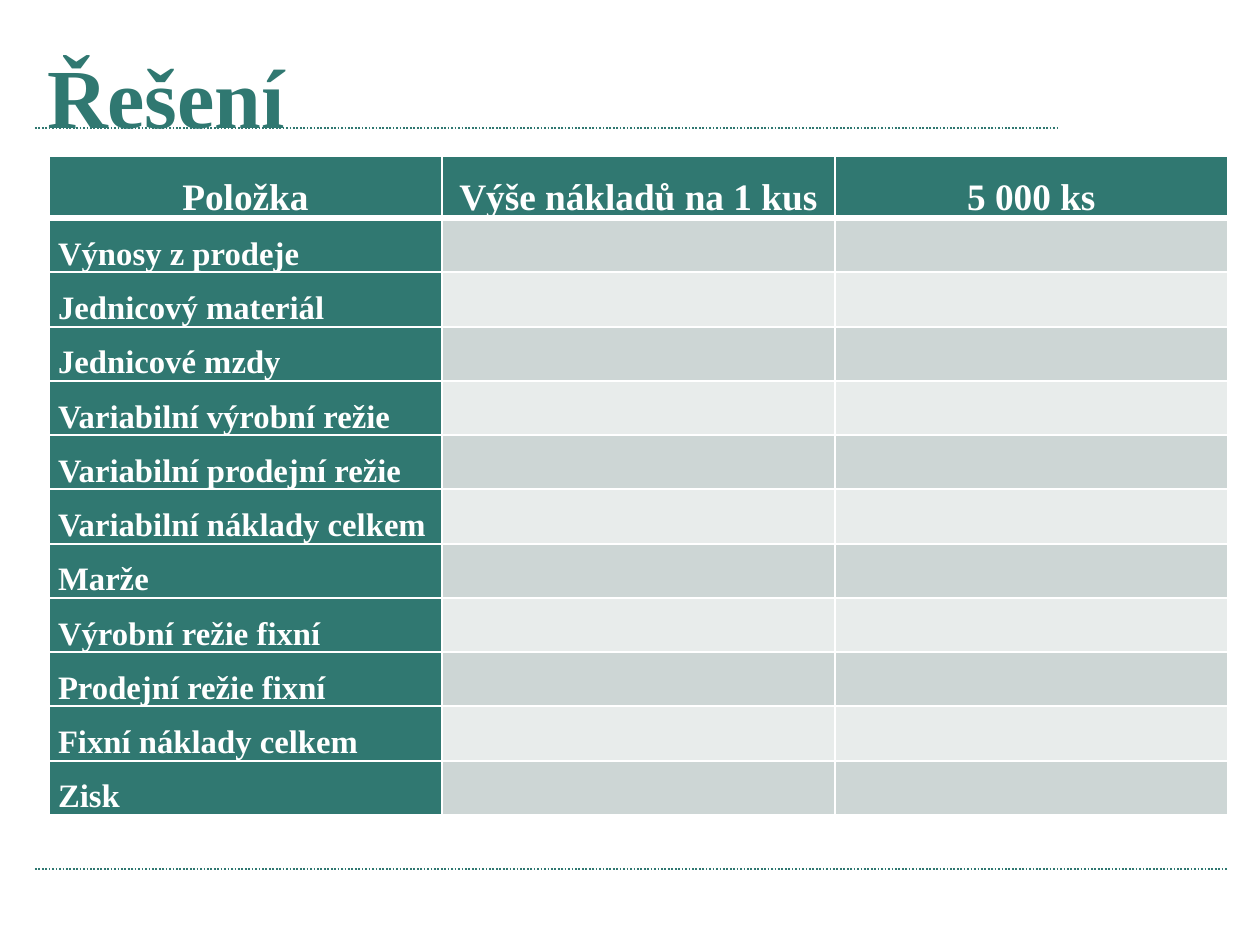
"""Build the slide with the empty cost and profit solution table."""
from lxml import etree
from pptx import Presentation
from pptx.dml.color import RGBColor
from pptx.enum.dml import MSO_LINE
from pptx.enum.shapes import MSO_CONNECTOR
from pptx.enum.text import MSO_ANCHOR, MSO_AUTO_SIZE, PP_ALIGN
from pptx.oxml.ns import qn
from pptx.util import Emu, Pt

PX = 914400 // 168
FONT = "Times New Roman"
COLORS = {"teal": "307871", "white": "FFFFFF", "dark": "CDD6D5", "light": "E8ECEB"}
LEFT, CENTER, JUSTIFY = PP_ALIGN.LEFT, PP_ALIGN.CENTER, PP_ALIGN.JUSTIFY
TOP, MIDDLE = MSO_ANCHOR.TOP, MSO_ANCHOR.MIDDLE
STRAIGHT, DOTTED, NO_FIT = MSO_CONNECTOR.STRAIGHT, MSO_LINE.ROUND_DOT, MSO_AUTO_SIZE.NONE

HEADINGS = ["Položka", "Výše nákladů na 1 kus", "5 000 ks"]
ITEMS = [
    "Výnosy z prodeje", "Jednicový materiál", "Jednicové mzdy",
    "Variabilní výrobní režie", "Variabilní prodejní režie",
    "Variabilní náklady celkem", "Marže", "Výrobní režie fixní",
    "Prodejní režie fixní", "Fixní náklady celkem", "Zisk",
]


def write(paragraph, text, size, color, align):
    paragraph.alignment = align
    run = paragraph.add_run()
    run.text = text
    run.font.name = FONT
    run.font.size = Pt(size)
    run.font.bold = True
    run.font.color.rgb = RGBColor.from_string(COLORS[color])


def add_border(cell, side, width):
    border = etree.SubElement(cell._tc.get_or_add_tcPr(), qn(f"a:ln{side}"), w=str(Pt(width)))
    paint = etree.SubElement(border, qn("a:solidFill"))
    etree.SubElement(paint, qn("a:srgbClr"), val=COLORS["white"])


prs = Presentation()
prs.slide_width, prs.slide_height = Emu(1260 * PX), Emu(945 * PX)
slide = prs.slides.add_slide(prs.slide_layouts[5])

for y, right in [(128, 1057), (869, 1227)]:
    rule = slide.shapes.add_connector(
        STRAIGHT, Emu(35 * PX), Emu(y * PX), Emu(right * PX), Emu(y * PX))
    rule.line.color.rgb = RGBColor.from_string(COLORS["teal"])
    rule.line.width = Pt(0.75)
    rule.line.dash_style = DOTTED
    etree.SubElement(rule._element.spPr, qn("a:effectLst"))

title = slide.shapes.title
title.left, title.top = Emu(30 * PX), Emu(27 * PX)
title.width, title.height = Emu(1110 * PX), Emu(99 * PX)
heading = title.text_frame
heading.auto_size = NO_FIT
heading.vertical_anchor = TOP
heading.margin_left, heading.margin_top, heading.margin_bottom = Emu(17 * PX), Emu(17 * PX), 0
write(heading.paragraphs[0], "Řešení", 36, "teal", LEFT)

rows = [HEADINGS] + [[item, "", ""] for item in ITEMS]
costs = slide.shapes.add_table(
    len(rows), len(HEADINGS), Emu(49 * PX), Emu(156 * PX),
    Emu(1179 * PX), Emu((60 + 54 * len(ITEMS)) * PX)).table
for column in costs.columns:
    column.width = Emu(393 * PX)

for r, values in enumerate(rows):
    is_header = r == 0
    costs.rows[r].height = Emu((60 if is_header else 54) * PX)
    for c, value in enumerate(values):
        cell = costs.cell(r, c)
        cell.margin_left = cell.margin_right = Emu(9 * PX)
        cell.margin_top = cell.margin_bottom = 0
        cell.vertical_anchor = MIDDLE
        for side in "LRTB":
            thick = (r, side) in [(0, "B"), (1, "T")]
            add_border(cell, side, 3 if thick else 1)
        band = "teal" if is_header or c == 0 else "dark" if r % 2 else "light"
        cell.fill.solid()
        cell.fill.fore_color.rgb = RGBColor.from_string(COLORS[band])
        if value:
            paragraph = cell.text_frame.paragraphs[0]
            paragraph.line_spacing = 1.5
            write(paragraph, value, 16 if is_header else 14, "white",
                  CENTER if is_header else JUSTIFY)

prs.save("out.pptx")
